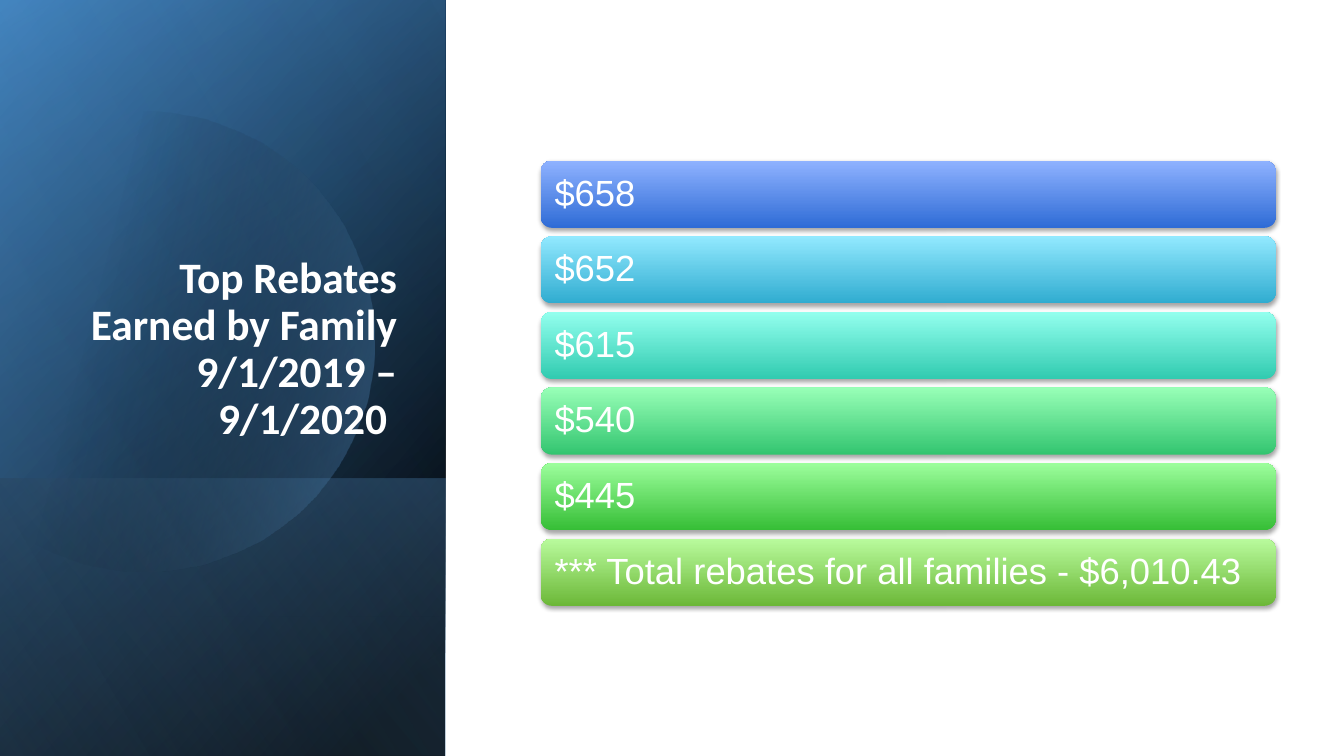
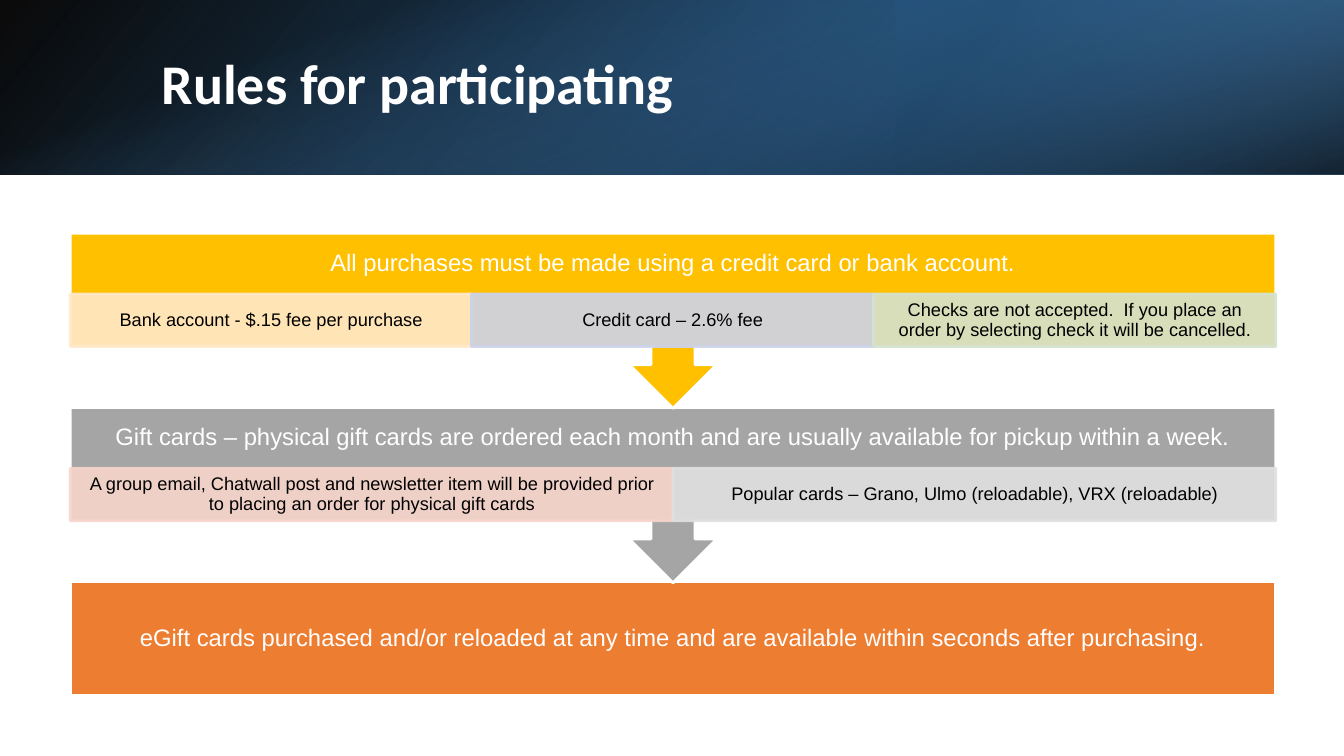
import math

import lxml.etree
import pptx
import pptx.dml.color
import pptx.enum.shapes
import pptx.enum.text
import pptx.oxml
import pptx.oxml.ns
import pptx.util

PX = 9525  # 96 px to the inch
WIDTH, HEIGHT = 1280, 720
WHITE, BLACK = "FFFFFF", "000000"
BLUE, DEEP_BLUE, NAVY, PALE_BLUE = "5B9BD5", "2E75B5", "1E4E79", "9CC2E5"

SHAPES = pptx.enum.shapes.MSO_SHAPE
ALIGN = pptx.enum.text.PP_ALIGN
ANCHOR = pptx.enum.text.MSO_ANCHOR
NAMESPACE = pptx.oxml.ns.nsdecls("a")
hex_color = pptx.dml.color.RGBColor.from_string


def paint(shape, color=None, alpha=100, line=None, stops=None, angle=0):
    """Fill with one colour or with (position, colour, opacity) stops."""
    shape.shadow.inherit = False
    properties = shape._element.spPr
    if line:
        shape.line.color.rgb = hex_color(line)
        shape.line.width = pptx.util.Pt(2)
    else:
        shape.line.fill.background()
    if stops:
        stop_list = "".join(
            f'<a:gs pos="{position * 1000}"><a:srgbClr val="{hex_color(stop_color)}">'
            f'<a:alpha val="{opacity * 1000}"/></a:srgbClr></a:gs>'
            for position, stop_color, opacity in stops)
        shape.fill.background()
        properties.replace(
            properties.find(pptx.oxml.ns.qn("a:noFill")),
            pptx.oxml.parse_xml(
                f'<a:gradFill {NAMESPACE} rotWithShape="1"><a:gsLst>{stop_list}</a:gsLst>'
                f'<a:lin ang="{angle * 60000}" scaled="0"/></a:gradFill>'))
        return
    shape.fill.solid()
    shape.fill.fore_color.rgb = hex_color(color)
    if alpha < 100:
        for node in properties.iter(pptx.oxml.ns.qn("a:srgbClr")):
            opacity = lxml.etree.SubElement(node, pptx.oxml.ns.qn("a:alpha"))
            opacity.set("val", str(alpha * 1000))


def write_text(shape, text, size, font="Arial", color=WHITE, bold=False,
               align=ALIGN.CENTER, anchor=ANCHOR.MIDDLE, insets=(10, 5, 10, 5)):
    frame = shape.text_frame
    frame.word_wrap = True
    frame.auto_size = pptx.enum.text.MSO_AUTO_SIZE.NONE
    frame.vertical_anchor = anchor
    (frame.margin_left, frame.margin_top,
     frame.margin_right, frame.margin_bottom) = [inset * PX for inset in insets]
    paragraph = frame.paragraphs[0]
    paragraph.text = text
    paragraph.alignment = align
    paragraph.line_spacing = 0.9
    for run in paragraph.runs:
        run.font.name = font
        run.font.size = pptx.util.Pt(size)
        run.font.bold = bold
        run.font.color.rgb = hex_color(color)


presentation = pptx.Presentation()
presentation.slide_width = WIDTH * PX
presentation.slide_height = HEIGHT * PX

# Title styles and gradient panels: box, rotation, flip, angle, stops
SIDE = (-148, 148, 720, 424)
slide_designs = [
    {
        "title": "Top Rebates Earned by Family\v9/1/2019 – 9/1/2020 ",
        "box": (61, 177, 327, 251),
        "format": {"size": 31, "align": ALIGN.RIGHT, "anchor": ANCHOR.BOTTOM},
        "panels": [
            (SIDE, 90, True, 50, [(0, BLACK, 100), (8, BLACK, 100), (100, DEEP_BLUE, 100)]),
            (SIDE, 90, True, 30, [(0, BLACK, 0), (99, BLUE, 46), (100, BLUE, 46)]),
            ((80, 376, 264, 424), 90, True, 130,
             [(0, BLUE, 29), (2, BLUE, 29), (100, BLACK, 30)]),
            (SIDE, 90, True, 120, [(0, BLACK, 0), (99, PALE_BLUE, 11), (100, PALE_BLUE, 11)]),
        ],
    },
    {
        "title": "Rules for participating",
        "box": (144, 36, 1054, 92),
        "format": {"size": 40, "align": ALIGN.LEFT},
        "panels": [
            ((0, 0, WIDTH, 166), 0, True, 140, [(0, BLACK, 96), (100, DEEP_BLUE, 100)]),
            ((853, 0, 427, 166), 180, True, 320,
             [(0, NAVY, 68), (19, NAVY, 68), (100, BLUE, 79)]),
            ((557, -557, 166, WIDTH), 90, False, 340,
             [(0, BLUE, 0), (23, BLUE, 0), (99, BLACK, 74), (100, BLACK, 74)]),
        ],
    },
]

slides, top_panels = [], []
for design in slide_designs:
    slide = presentation.slides.add_slide(presentation.slide_layouts[5])
    for box, rotation, flipped, angle, stops in design["panels"]:
        panel = slide.shapes.add_shape(SHAPES.RECTANGLE, *[length * PX for length in box])
        panel.rotation = rotation
        if flipped:
            panel._element.spPr.get_or_add_xfrm().set("flipH", "1")
        paint(panel, stops=stops, angle=angle)
    title = slide.shapes.title
    title.left, title.top, title.width, title.height = [length * PX for length in design["box"]]
    write_text(title, design["title"], font="Calibri", bold=True, **design["format"])
    panel._element.addnext(title._element)
    slides.append(slide)
    top_panels.append(panel)
rebates_slide, rules_slide = slides

# Slide 1: large circle cut by the left edge, under the top panel
center_x, center_y, radius = 138, 325, 219
circle_points = [
    (max(0, round(center_x + radius * math.cos(math.radians(degree)))),
     round(center_y + radius * math.sin(math.radians(degree))))
    for degree in range(0, 360, 3)]
builder = rebates_slide.shapes.build_freeform(*circle_points[0], scale=PX)
builder.add_line_segments(circle_points[1:], close=True)
circle = builder.convert_to_shape()
paint(circle, stops=[(0, BLACK, 0), (29, BLACK, 0), (100, BLUE, 43)], angle=14)
top_panels[0]._element.addprevious(circle._element)

# Slide 1: rebate bars
rebates = [
    ("$658", "2F6CD6", "8FB2FF"),
    ("$652", "30ACD0", "92E9FF"),
    ("$615", "31CBB0", "93FFEE"),
    ("$540", "33C570", "98FFB7"),
    ("$445", "36BE36", "9CFE9C"),
    ("*** Total rebates for all families - $6,010.43", "6CB838", "B9FB9D"),
]
for index, (amount, dark, light) in enumerate(rebates):
    bar = rebates_slide.shapes.add_shape(
        SHAPES.ROUNDED_RECTANGLE, 515 * PX, (153 + 72 * index) * PX, 700 * PX, 64 * PX)
    paint(bar, stops=[(0, dark, 100), (100, light, 100)], angle=270)
    effects = bar._element.spPr.find(pptx.oxml.ns.qn("a:effectLst"))
    effects.append(pptx.oxml.parse_xml(
        f'<a:outerShdw {NAMESPACE} blurRad="{pptx.util.Pt(3.1)}" dist="{pptx.util.Pt(1.8)}" '
        f'dir="5400000" rotWithShape="0"><a:srgbClr val="{BLACK}"><a:alpha val="35000"/>'
        '</a:srgbClr></a:outerShdw>'))
    write_text(bar, amount, 26, align=ALIGN.LEFT)

# Slide 2: chain of rules, drawn from the bottom up so each arrow lies on top
LEFT, CHAIN_WIDTH = 67, 1148
FIRST_TOP, STEP = 222, 166
HEADING_HEIGHT, DETAIL_HEIGHT = 58, 50
rules = [
    ("All purchases must be made using a credit card or bank account.", "FFC000", [
        ("Bank account - $.15 fee per purchase", "FFE8CA"),
        ("Credit card – 2.6% fee", "CCD3EA"),
        ("Checks are not accepted.  If you place an order by selecting check "
         "it will be cancelled.", "D4E2CE"),
    ]),
    ("Gift cards – physical gift cards are ordered each month and are usually available "
     "for pickup within a week.", "A5A5A5", [
         ("A group email, Chatwall post and newsletter item will be provided prior to "
          "placing an order for physical gift cards", "F7D5CB"),
         ("Popular cards – Grano, Ulmo (reloadable), VRX (reloadable)", "E0E0E0"),
     ]),
    ("eGift cards purchased and/or reloaded at any time and are available within seconds "
     "after purchasing.", "ED7D31", []),
]
for index, (rule, color, details) in reversed(list(enumerate(rules))):
    top = FIRST_TOP + STEP * index
    kind, height = (SHAPES.DOWN_ARROW_CALLOUT, 167) if details else (SHAPES.RECTANGLE, 108)
    block = rules_slide.shapes.add_shape(
        kind, LEFT * PX, top * PX, CHAIN_WIDTH * PX, height * PX)
    if details:
        for position, value in enumerate((0.25, 0.25, 0.25, 0.65)):
            block.adjustments[position] = value
    paint(block, color, line=WHITE)
    bottom_inset = DETAIL_HEIGHT + 12 if details else 12
    write_text(block, rule, 17, insets=(12, 12, 12, bottom_inset))

    for column, (detail, tint) in enumerate(details):
        start = CHAIN_WIDTH * column // len(details)
        end = CHAIN_WIDTH * (column + 1) // len(details)
        cell = rules_slide.shapes.add_shape(
            SHAPES.RECTANGLE, (LEFT + start) * PX, (top + HEADING_HEIGHT) * PX,
            (end - start) * PX, DETAIL_HEIGHT * PX)
        paint(cell, tint, alpha=90, line=tint)
        write_text(cell, detail, 13, color=BLACK, insets=(10, 2, 10, 2))

presentation.save("out.pptx")
